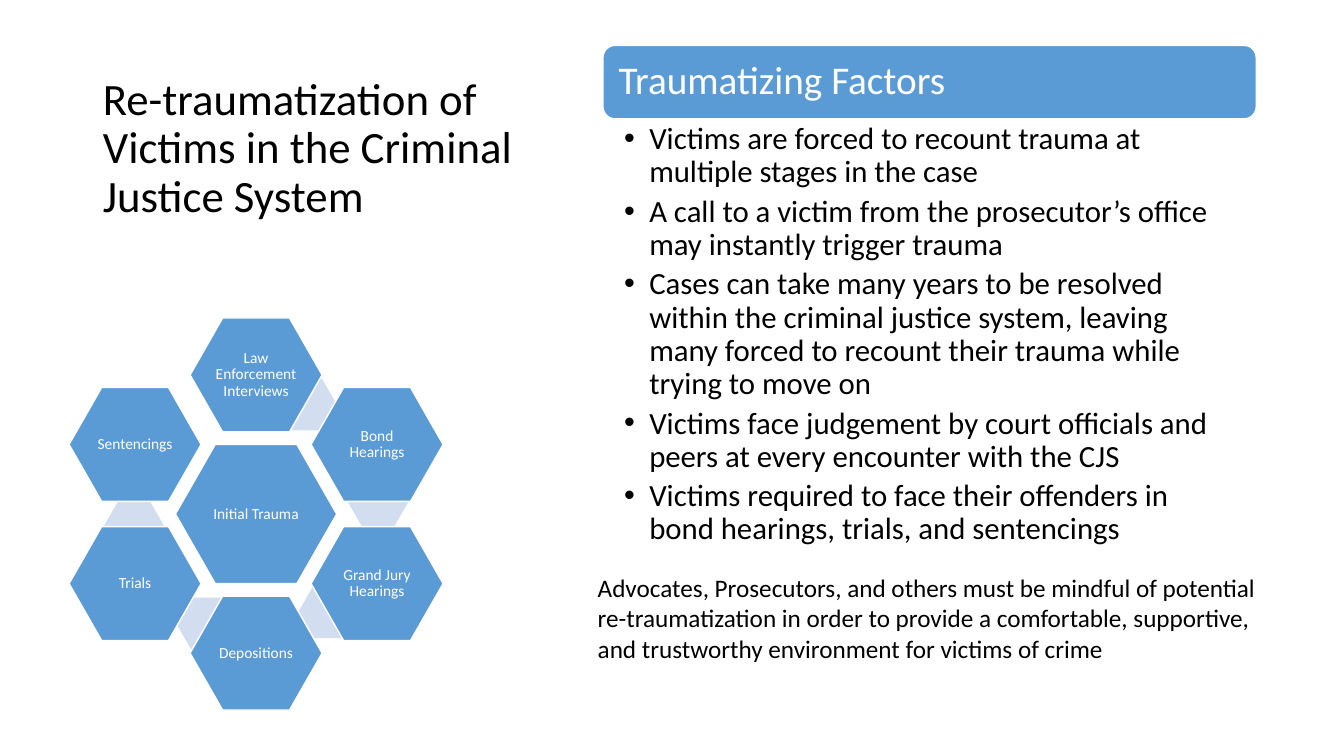
from pptx import Presentation
from pptx.dml.color import RGBColor
from pptx.enum.shapes import MSO_SHAPE as Preset
from pptx.enum.text import MSO_ANCHOR as Anchor, MSO_AUTO_SIZE as AutoSize, PP_ALIGN as Align
from pptx.util import Inches, Pt

COLORS = {"blue": "5B9BD5", "pale": "D2DEEF", "white": "FFFFFF", "black": "000000"}


def write(shape, lines, size, color, margins, frame_format, paragraph_format):
    frame = shape.text_frame
    frame.text = "\n".join(lines)
    sides = ("margin_left", "margin_top", "margin_right", "margin_bottom")
    frame_values = {"word_wrap": True, "auto_size": AutoSize.NONE,
                    **dict(zip(sides, map(Inches, margins))), **frame_format}
    for key, value in frame_values.items():
        setattr(frame, key, value)
    for paragraph in frame.paragraphs:
        for key, value in paragraph_format.items():
            setattr(paragraph, key, value)
        for key, value in {"name": "Calibri", "size": Pt(size)}.items():
            setattr(paragraph.font, key, value)
        paragraph.font.color.rgb = RGBColor.from_string(COLORS[color])


def add_block(preset, left, top, width, height, fill, adjust=None):
    block = slide.shapes.add_shape(preset, *map(Inches, (left, top, width, height)))
    block.shadow.inherit = False
    block.fill.solid()
    block.fill.fore_color.rgb = RGBColor.from_string(COLORS[fill])
    if fill == "blue":
        block.line.color.rgb = RGBColor.from_string(COLORS["white"])
        block.line.width = Pt(1)
    else:
        block.line.fill.background()
    if adjust:
        block.adjustments[0] = adjust
    return block


deck = Presentation()
deck.slide_width, deck.slide_height = Inches(13.33), Inches(7.5)
slide = deck.slides.add_slide(deck.slide_layouts[1])
heading, factors = slide.placeholders
for placeholder, place in ((heading, (0.92, 0.5, 4.3, 1.75)),
                           (factors, (5.98, 1.18, 6.48, 4.44))):
    for key, value in zip(("left", "top", "width", "height"), place):
        setattr(placeholder, key, Inches(value))

# Title
write(heading, ["Re-traumatization of Victims in the Criminal Justice System"],
      32, "black", (0.1, 0.05, 0.1, 0.05), {"vertical_anchor": Anchor.BOTTOM},
      {"alignment": Align.LEFT, "line_spacing": 0.9})

# Traumatizing factors: banner and bullet list
banner = add_block(Preset.ROUNDED_RECTANGLE, 5.98, 0.45, 6.48, 0.73, "blue")
write(banner, ["Traumatizing Factors"], 28, "white", (0.12, 0.08, 0.12, 0.08),
      {"vertical_anchor": Anchor.MIDDLE}, {"alignment": Align.LEFT, "line_spacing": 0.9})

write(factors, [
    "Victims are forced to recount trauma at multiple stages in the case",
    "A call to a victim from the prosecutor’s office may instantly trigger trauma",
    "Cases can take many years to be resolved within the criminal justice system, "
    "leaving many forced to recount their trauma while trying to move on",
    "Victims face judgement by court officials and peers at every encounter with the CJS",
    "Victims required to face their offenders in bond hearings, trials, and sentencings",
], 22, "black", (0.21, 0.04, 0.22, 0.04), {"vertical_anchor": Anchor.TOP},
    {"line_spacing": 0.9, "space_before": Pt(0), "space_after": Pt(4.4)})
for factor in factors.text_frame.paragraphs:
    indents = factor._p.get_or_add_pPr()
    indents.set("marL", str(Inches(0.25)))
    indents.set("indent", str(-Inches(0.25)))

# Stages of the case around the initial trauma, clockwise from the top
CENTER_X, CENTER_Y = 2.54, 5.1
STEP_X, STEP_Y = 1.2, 1.38
stages = [  # label, column and row offset, link behind the stage
    ("Initial Trauma", 0, 0, None),
    ("Law Enforcement Interviews", 0, -1, (2.74, 3.75)),
    ("Bond Hearings", 1, -0.5, (3.45, 4.72)),
    ("Grand Jury Hearings", 1, 0.5, (2.96, 5.81)),
    ("Depositions", 0, 1, (1.75, 5.93)),
    ("Trials", -1, 0.5, (1.03, 4.96)),
    ("Sentencings", -1, -0.5, None),
]
for label, column, row, link in stages:
    if link:
        add_block(Preset.HEXAGON, *link, 0.6, 0.52, "pale", 0.289)
    width, height = (1.31, 1.13) if column or row else (1.6, 1.38)
    stage = add_block(Preset.HEXAGON, CENTER_X + column * STEP_X - width / 2,
                      CENTER_Y + row * STEP_Y - height / 2, width, height, "blue", 0.286)
    write(stage, [label], 11, "white", (0, 0, 0, 0), {"vertical_anchor": Anchor.MIDDLE},
          {"alignment": Align.CENTER, "line_spacing": 0.9})

# Closing advice
advice = slide.shapes.add_textbox(*map(Inches, (5.83, 5.63, 6.8, 1.31)))
write(advice, ["Advocates, Prosecutors, and others must be mindful of potential "
               "re-traumatization in order to provide a comfortable, supportive, "
               "and trustworthy environment for victims of crime"],
      18, "black", (0.1, 0.05, 0.1, 0.05), {"auto_size": AutoSize.SHAPE_TO_FIT_TEXT}, {})

deck.save("out.pptx")
